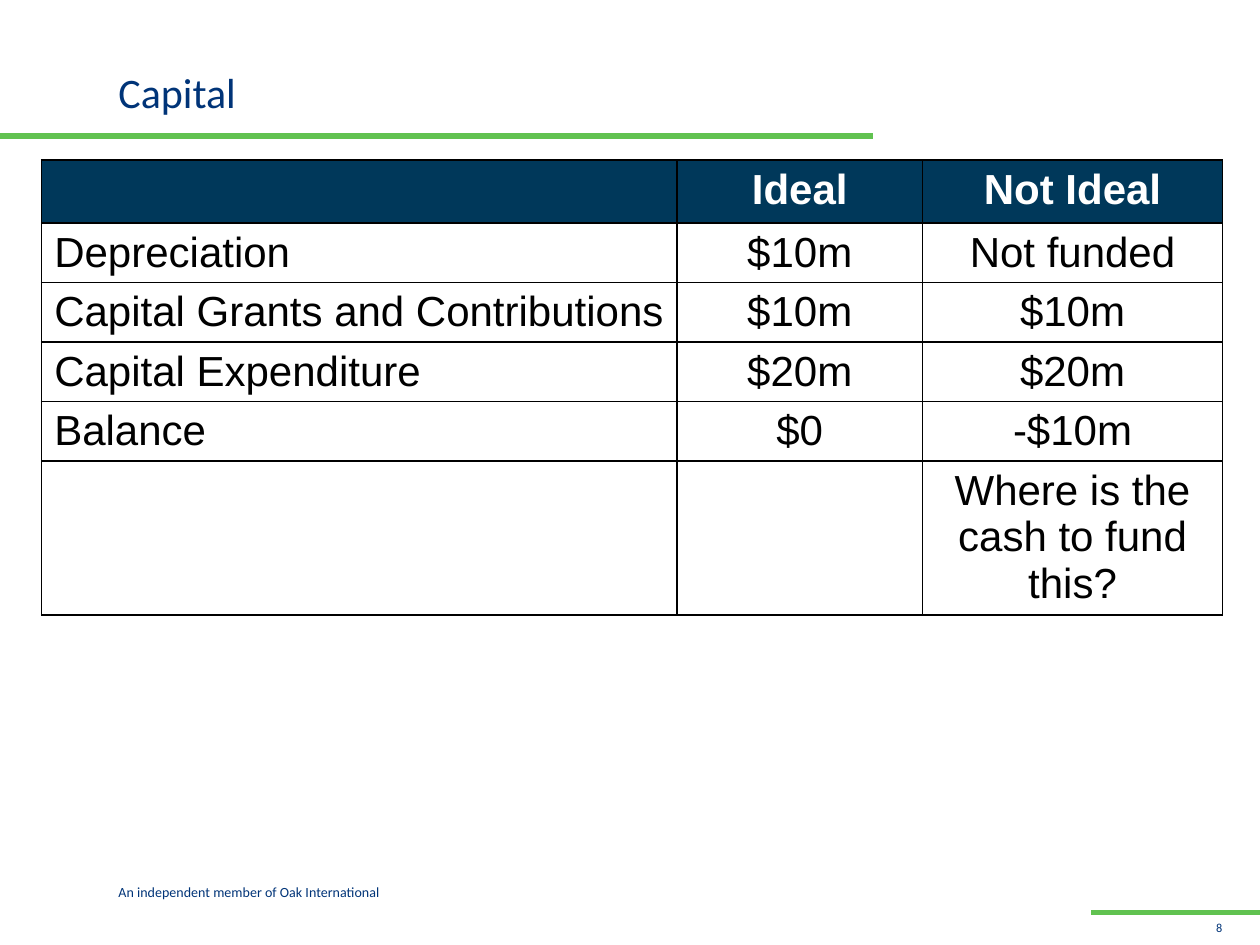
from lxml import etree
from pptx import Presentation
from pptx import util as u
from pptx.dml.color import RGBColor
from pptx.enum import shapes, text
from pptx.oxml.ns import qn

COLORS = {"navy": "003478", "header": "00385A", "green": "61C250",
          "black": "000000", "white": "FFFFFF"}
ROWS = [
    ["", "Ideal", "Not Ideal"],
    ["Depreciation", "$10m", "Not funded"],
    ["Capital Grants and Contributions", "$10m", "$10m"],
    ["Capital Expenditure", "$20m", "$20m"],
    ["Balance", "$0", "-$10m"],
    ["", "", "Where is the cash to fund this?"],
]
COLUMN_WIDTHS = [363, 140.4, 171.4]
ROW_HEIGHTS = [36, 34, 34, 34, 34, 88]
LEFT, CENTER, RIGHT = text.PP_ALIGN.LEFT, text.PP_ALIGN.CENTER, text.PP_ALIGN.RIGHT
TOP, BOTTOM = text.MSO_ANCHOR.TOP, text.MSO_ANCHOR.BOTTOM


def color(name):
    return RGBColor.from_string(COLORS[name])


class SlideBuilder:
    """Holds the slide and its text style."""

    font = "Calibri"
    table_font = "Arial"

    def __init__(self, slide):
        self.slide = slide

    def add_words(self, paragraph, words, size, ink="navy", font=None, align=LEFT, bold=False):
        paragraph.alignment = align
        run = paragraph.add_run()
        run.text = words
        run.font.name = font or self.font
        run.font.size = u.Pt(size)
        run.font.bold = bold
        run.font.color.rgb = color(ink)

    def frame(self, shape, anchor):
        """Remove the margins, turn on wrapping and return the first paragraph."""
        frame = shape.text_frame
        frame.margin_left = frame.margin_right = 0
        frame.margin_top = frame.margin_bottom = 0
        frame.word_wrap = True
        frame.auto_size = text.MSO_AUTO_SIZE.NONE
        frame.vertical_anchor = anchor
        return frame.paragraphs[0]

    def title(self, words, left, top, width, height):
        shape = self.slide.shapes.title
        shape.left, shape.top = u.Pt(left), u.Pt(top)
        shape.width, shape.height = u.Pt(width), u.Pt(height)
        paragraph = self.frame(shape, BOTTOM)
        paragraph.line_spacing = u.Pt(24)
        self.add_words(paragraph, words, 24)

    def label(self, words, left, top, width, height, size, align=LEFT, anchor=TOP):
        shape = self.slide.shapes.add_textbox(*map(u.Pt, (left, top, width, height)))
        self.add_words(self.frame(shape, anchor), words, size, align=align)

    def rule(self, start, end, y):
        line = self.slide.shapes.add_connector(
            shapes.MSO_CONNECTOR.STRAIGHT, *map(u.Pt, (start, y, end, y)))
        line.line.color.rgb = color("green")
        line.line.width = u.Pt(3)
        etree.SubElement(line._element.spPr, qn("a:effectLst"))

    def border(self, cell):
        properties = cell._tc.get_or_add_tcPr()
        for position, side in enumerate(("a:lnL", "a:lnR", "a:lnT", "a:lnB")):
            line = etree.Element(qn(side), w=str(u.Pt(1)))
            fill = etree.SubElement(line, qn("a:solidFill"))
            etree.SubElement(fill, qn("a:srgbClr"), val=COLORS["black"])
            properties.insert(position, line)

    def table(self, rows, left, top, widths, heights):
        table = self.slide.shapes.add_table(
            len(rows), len(widths),
            *map(u.Pt, (left, top, sum(widths), sum(heights)))).table
        for column, width in zip(table.columns, widths):
            column.width = u.Pt(width)
        for r, (values, height) in enumerate(zip(rows, heights)):
            table.rows[r].height = u.Pt(height)
            header = r == 0
            for c, value in enumerate(values):
                cell = table.cell(r, c)
                cell.fill.solid()
                cell.fill.fore_color.rgb = color("header" if header else "white")
                self.border(cell)
                if value:
                    self.add_words(cell.text_frame.paragraphs[0], value, 24,
                                   "white" if header else "black", self.table_font,
                                   CENTER if c else LEFT, header)


def main():
    presentation = Presentation()
    presentation.slide_width, presentation.slide_height = u.Pt(720), u.Pt(540)
    builder = SlideBuilder(presentation.slides.add_slide(presentation.slide_layouts[5]))
    builder.rule(0, 499, 77.8)
    builder.rule(623.5, 720, 521.3)
    builder.label("An independent member of Oak International", 67.7, 504.7, 188.6, 9.4, 8)
    builder.title("Capital", 67.7, 18.7, 433.4, 48.2)
    builder.label("8", 670.3, 519.8, 28.1, 14.4, 7, RIGHT, BOTTOM)
    builder.table(ROWS, 23.8, 91.4, COLUMN_WIDTHS, ROW_HEIGHTS)
    presentation.save("out.pptx")


if __name__ == "__main__":
    main()
